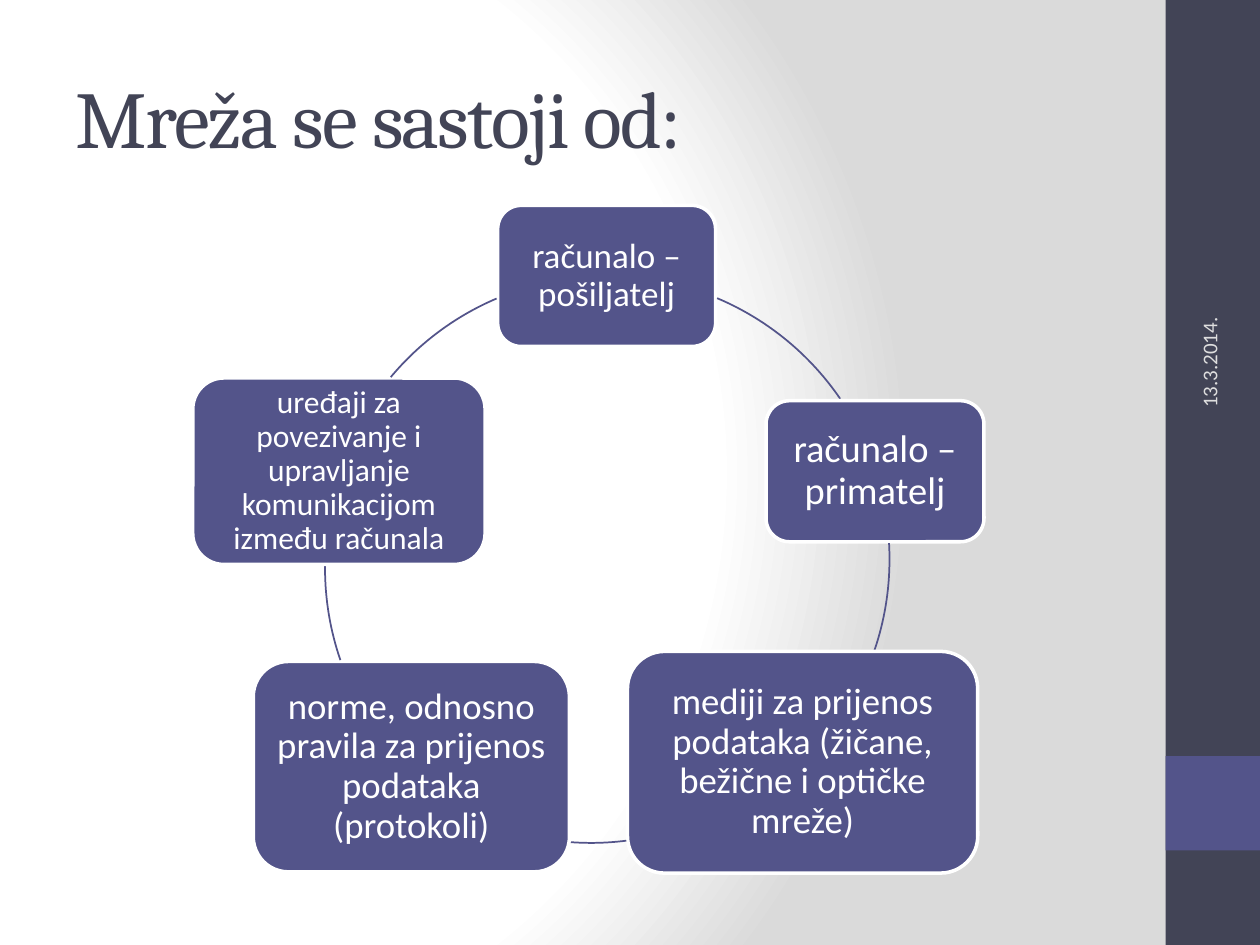
from lxml.etree import SubElement
from pptx import Presentation
from pptx.dml.color import RGBColor
from pptx.enum.shapes import MSO_SHAPE as Preset
from pptx.enum.text import MSO_ANCHOR as Anchor, MSO_AUTO_SIZE as AutoSize, PP_ALIGN as Align
from pptx.oxml.ns import qn
from pptx.util import Pt

PX = 9144  # 100 px to the inch
INK, ACCENT, WHITE, GREY, PALE = "424456", "53548A", "FFFFFF", "DADADA", "DEDEDE"

RING = 448
# label, font size, inset, box
NODES = [
    ("računalo – pošiljatelj", 20, 8, (395, 163, 173, 112)),
    ("računalo – primatelj", 22, 9, (608, 318, 173, 112)),
    ("mediji za prijenos podataka (žičane, bežične i optičke mreže)", 21, 9, (498, 517, 278, 176)),
    ("norme, odnosno pravila za prijenos podataka (protokoli)", 21, 9, (201, 525, 251, 167)),
    ("uređaji za povezivanje i upravljanje komunikacijom između računala", 18, 7,
     (153, 300, 232, 148)),
]
# ring left and top, start and end angle in degrees, clockwise from the right
ARCS = [
    (258, 219, 292.9, 325.6),
    (258, 220, 356.7, 18.8),
    (245, 221, 82.8, 94.4),
    (258, 227, 161, 180.8),
    (258, 219, 219.9, 246.9),
]


def px(*lengths):
    return [round(length * PX) for length in lengths]


def rgb(value):
    return RGBColor.from_string(value)


def style_text(frame, text, font, size, color, align, inset=None):
    frame.text = text
    frame.word_wrap = True
    frame.auto_size = AutoSize.NONE
    frame.vertical_anchor = Anchor.MIDDLE
    if inset is not None:
        (margin,) = px(inset)
        frame.margin_left = frame.margin_right = margin
        frame.margin_top = frame.margin_bottom = margin
    paragraph = frame.paragraphs[0]
    paragraph.alignment = align
    run_font = paragraph.runs[0].font
    run_font.name, run_font.size = font, Pt(size)
    run_font.color.rgb = rgb(color)
    return paragraph


def add_filled(slide, preset, box, fill, line=None):
    shape = slide.shapes.add_shape(preset, *px(*box))
    shape.shadow.inherit = False
    shape.fill.solid()
    shape.fill.fore_color.rgb = rgb(fill)
    if line:
        shape.line.color.rgb = rgb(line)
        shape.line.width = Pt(2)
    else:
        shape.line.fill.background()
    return shape


def paint_background(slide):
    """Radial gradient, which python-pptx cannot set by itself."""
    fill = slide.background.fill
    fill.gradient()
    gradient = slide.element.find(".//" + qn("a:gradFill"))
    for child in list(gradient):
        gradient.remove(child)
    stops = SubElement(gradient, qn("a:gsLst"))
    for position, color in ((0, WHITE), (75, WHITE), (100, GREY)):
        stop = SubElement(stops, qn("a:gs"), pos=str(position * 1000))
        SubElement(stop, qn("a:srgbClr"), val=color)
    path = SubElement(gradient, qn("a:path"), {"path": "circle"})
    SubElement(path, qn("a:fillToRect"), l="20000", t="50000", r="100000", b="50000")


def add_sidebar(slide, left, top, width, height):
    add_filled(slide, Preset.RECTANGLE, (left, top, width, height), INK)
    add_filled(slide, Preset.RECTANGLE, (left, top + 600, width, width), ACCENT)
    date = slide.shapes.add_textbox(*px(left - 99, top + 180, 267, 40))
    date.rotation = 270
    style_text(date.text_frame, "13.3.2014.", "Calibri", 12, PALE, Align.LEFT)


def set_title(slide, box):
    title = slide.shapes.title
    title.left, title.top, title.width, title.height = px(*box)
    paragraph = style_text(title.text_frame, "Mreža se sastoji od:", "Cambria", 46, INK, Align.LEFT)
    paragraph.runs[0].font._element.set("spc", "-100")


def add_node(slide, label, size, inset, box):
    node = add_filled(slide, Preset.ROUNDED_RECTANGLE, box, ACCENT, WHITE)
    paragraph = style_text(node.text_frame, label, "Calibri", size, WHITE, Align.CENTER, inset)
    paragraph.line_spacing = 0.9


def add_arc(slide, left, top, start, end):
    arc = slide.shapes.add_shape(Preset.ARC, *px(left, top, RING, RING))
    arc.shadow.inherit = False
    arc.fill.background()
    arc.line.color.rgb = rgb(ACCENT)
    arc.line.width = Pt(1)
    for index, degrees in enumerate((start, end)):
        arc.adjustments[index] = degrees * 0.6  # 60000 units a degree, stored per 100000


def add_cycle(slide):
    for node, arc in zip(NODES, ARCS):
        add_node(slide, *node)
        add_arc(slide, *arc)


def main():
    deck = Presentation()
    deck.slide_width, deck.slide_height = px(1000, 750)
    slide = deck.slides.add_slide(deck.slide_layouts[5])
    paint_background(slide)
    add_sidebar(slide, 925, 0, 75, 750)
    set_title(slide, (50, 30, 833, 125))
    add_cycle(slide)
    deck.save("out.pptx")


if __name__ == "__main__":
    main()
